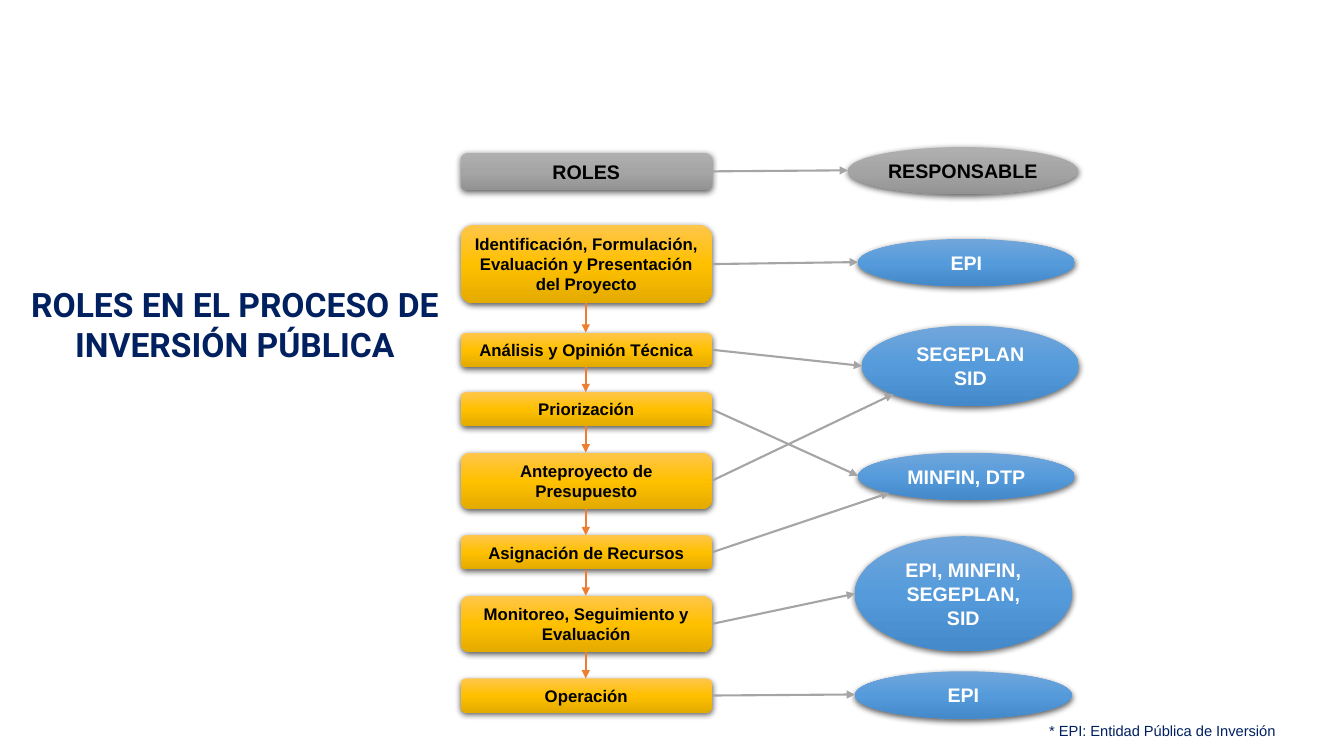
"""Build the slide on roles and responsible bodies in public investment."""
from dataclasses import dataclass
from itertools import pairwise
from math import sqrt

from lxml.etree import SubElement
from pptx import Presentation
from pptx.dml.color import RGBColor
from pptx.enum.shapes import MSO_CONNECTOR, MSO_SHAPE
from pptx.enum.text import MSO_ANCHOR, MSO_AUTO_SIZE, PP_ALIGN
from pptx.oxml.ns import qn
from pptx.slide import Slide
from pptx.text.text import TextFrame
from pptx.util import Pt

EMU_PER_PX = 9144
NAVY = RGBColor(0x00, 0x20, 0x60)
BLACK = RGBColor(0x00, 0x00, 0x00)
WHITE = RGBColor(0xFF, 0xFF, 0xFF)
GREY = RGBColor(0xA5, 0xA5, 0xA5)
ORANGE = RGBColor(0xED, 0x7D, 0x31)
GOLD_SHADES = (RGBColor(0xFF, 0xC6, 0x4B), RGBColor(0xFF, 0xC0, 0x00), RGBColor(0xE3, 0xAB, 0x00))
BLUE_SHADES = (RGBColor(0x71, 0xA6, 0xDB), RGBColor(0x55, 0x9B, 0xDB), RGBColor(0x44, 0x8A, 0xCA))
GREY_SHADES = (RGBColor(0xAF, 0xAF, 0xAF), GREY, RGBColor(0x93, 0x93, 0x93))

ROLE_LEFT, ROLE_WIDTH = 457, 249
BODY_WIDTH = 215
Point = tuple[int, int]


@dataclass(frozen=True)
class Node:
    text: str
    top: int
    height: int
    left: int = ROLE_LEFT
    width: int = ROLE_WIDTH
    kind: MSO_SHAPE = MSO_SHAPE.ROUNDED_RECTANGLE
    shades: tuple[RGBColor, ...] = GOLD_SHADES
    color: RGBColor = BLACK
    size: float = 12

    @property
    def center(self) -> Point:
        return self.left + self.width // 2, self.top + self.height // 2

    @property
    def left_side(self) -> Point:
        return self.left, self.center[1]

    @property
    def right_side(self) -> Point:
        return self.left + self.width, self.center[1]

    @property
    def top_side(self) -> Point:
        return self.center[0], self.top

    @property
    def bottom_side(self) -> Point:
        return self.center[0], self.top + self.height

    @property
    def lower_left(self) -> Point:
        x, y = self.center
        return round(x - self.width / sqrt(8)), round(y + self.height / sqrt(8))


def body(text: str, left: int, top: int, height: int) -> Node:
    """Describe the ellipse of a responsible body."""
    return Node(text, top, height, left, BODY_WIDTH, MSO_SHAPE.OVAL, BLUE_SHADES, WHITE, 14)


ROLES_HEADER = Node("ROLES", 152, 37, shades=GREY_SHADES, size=14)
BODIES_HEADER = Node("RESPONSABLE", 146, 47, 841, 228, MSO_SHAPE.OVAL, GREY_SHADES, size=14)
ROLES = (
    Node("Identificación, Formulación, Evaluación y Presentación del Proyecto", 223, 78),
    Node("Análisis y Opinión Técnica", 330, 34),
    Node("Priorización", 389, 34),
    Node("Anteproyecto de Presupuesto", 449, 56),
    Node("Asignación de Recursos", 531, 34),
    Node("Monitoreo, Seguimiento y Evaluación", 591, 56),
    Node("Operación", 673, 34),
)
FORMULATION, ANALYSIS, PRIORITIES, DRAFT_BUDGET, ALLOCATION, MONITORING, OPERATION = ROLES
BODIES = (
    body("EPI", 851, 237, 47),
    body("SEGEPLAN\nSID", 855, 323, 80),
    body("MINFIN, DTP", 851, 449, 47),
    body("EPI, MINFIN, SEGEPLAN, SID", 848, 532, 114),
    body("EPI", 848, 666, 47),
)
ENTITY, PLANNING, FINANCE, ALL_BODIES, OPERATOR = BODIES
ASSIGNMENTS = (
    (ROLES_HEADER, BODIES_HEADER.left_side),
    (FORMULATION, ENTITY.left_side),
    (ANALYSIS, PLANNING.left_side),
    (PRIORITIES, FINANCE.left_side),
    (DRAFT_BUDGET, PLANNING.lower_left),
    (ALLOCATION, FINANCE.lower_left),
    (MONITORING, ALL_BODIES.left_side),
    (OPERATION, OPERATOR.left_side),
)


def emu(*lengths: int) -> list[int]:
    """Turn px into EMU."""
    return [length * EMU_PER_PX for length in lengths]


def write(frame: TextFrame, text: str, size: float, color: RGBColor,
          bold: bool = True, font: str = "Arial", spacing: float = 1.0) -> None:
    """Set centred text and its format."""
    frame.text = text
    frame.word_wrap = True
    frame.auto_size = MSO_AUTO_SIZE.NONE
    frame.margin_left = frame.margin_right = frame.margin_top = frame.margin_bottom = 5 * EMU_PER_PX
    for paragraph in frame.paragraphs:
        paragraph.alignment = PP_ALIGN.CENTER
        paragraph.line_spacing = spacing
        for run in paragraph.runs:
            run.font.name, run.font.size, run.font.bold = font, Pt(size), bold
            run.font.color.rgb = color


def add_node(slide: Slide, node: Node) -> None:
    """Draw a shaded shape with its label."""
    shape = slide.shapes.add_shape(node.kind, *emu(node.left, node.top, node.width, node.height))
    shape.fill.gradient()
    shape.fill.gradient_angle = 270
    shape.line.fill.background()
    shape.shadow.inherit = False
    properties = shape._element.spPr
    stops = properties.find(".//" + qn("a:gsLst"))
    stops.clear()
    for position, shade in zip((0, 50000, 100000), node.shades):
        stop = SubElement(stops, qn("a:gs"), pos=str(position))
        SubElement(stop, qn("a:srgbClr"), val=str(shade))
    shadow = SubElement(properties.find(qn("a:effectLst")), qn("a:outerShdw"), blurRad="57150",
                        dist="19050", dir="5400000", algn="ctr", rotWithShape="0")
    shadow_color = SubElement(shadow, qn("a:srgbClr"), val=str(BLACK))
    SubElement(shadow_color, qn("a:alpha"), val="63000")
    write(shape.text_frame, node.text, node.size, node.color)
    shape.text_frame.vertical_anchor = MSO_ANCHOR.MIDDLE


def add_arrow(slide: Slide, start: Point, end: Point, color: RGBColor) -> None:
    """Draw a straight arrow between two points."""
    arrow = slide.shapes.add_connector(MSO_CONNECTOR.STRAIGHT, *emu(*start, *end))
    arrow.line.color.rgb = color
    arrow.line.width = Pt(1.5)
    properties = arrow._element.spPr
    SubElement(properties.find(qn("a:ln")), qn("a:tailEnd"), type="triangle")
    SubElement(properties, qn("a:effectLst"))


def main() -> None:
    """Build and save the slide."""
    presentation = Presentation()
    presentation.slide_width, presentation.slide_height = emu(1333, 750)
    slide = presentation.slides.add_slide(presentation.slide_layouts[5])

    title = slide.shapes.title
    title.left, title.top, title.width, title.height = emu(21, 276, 424, 91)
    write(title.text_frame, "ROLES EN EL PROCESO DE INVERSIÓN PÚBLICA", 24, NAVY, font="Roboto")
    title.text_frame.vertical_anchor = MSO_ANCHOR.MIDDLE

    for node in (*ROLES, *BODIES, ROLES_HEADER, BODIES_HEADER):
        add_node(slide, node)
    for role, target in ASSIGNMENTS:
        add_arrow(slide, role.right_side, target, GREY)
    for role, next_role in pairwise(ROLES):
        add_arrow(slide, role.bottom_side, next_role.top_side, ORANGE)

    footnote = slide.shapes.add_textbox(*emu(975, 713, 356, 29))
    write(footnote.text_frame, "* EPI: Entidad Pública de Inversión", 10.5, NAVY, bold=False, spacing=0.9)
    presentation.save("out.pptx")


if __name__ == "__main__":
    main()
